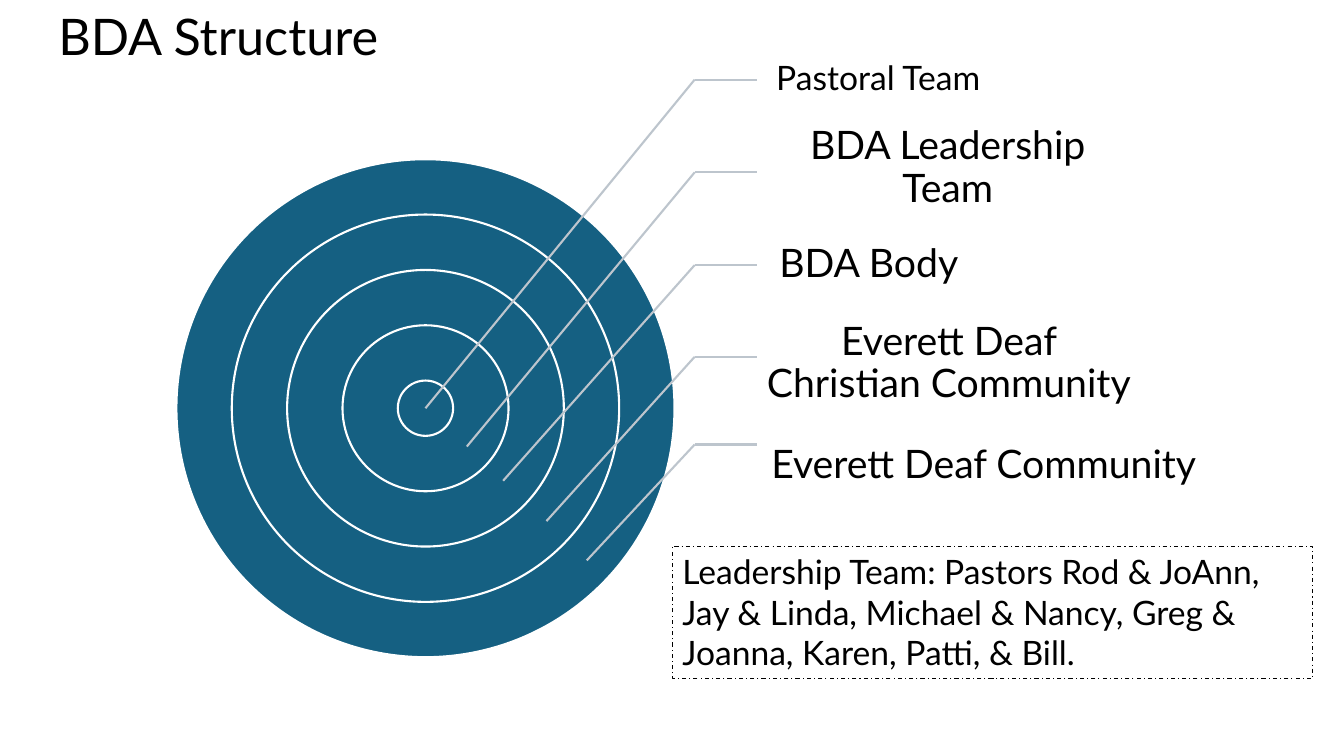
import pptx
import pptx.dml.color
import pptx.enum.dml
import pptx.enum.shapes
import pptx.enum.text
import pptx.oxml.ns
import pptx.util
import lxml.etree

Inches = pptx.util.Inches
Pt = pptx.util.Pt
LEFT = pptx.enum.text.PP_ALIGN.LEFT
CENTER = pptx.enum.text.PP_ALIGN.CENTER
TOP = pptx.enum.text.MSO_ANCHOR.TOP
MIDDLE = pptx.enum.text.MSO_ANCHOR.MIDDLE
SHAPE = pptx.enum.shapes.MSO_SHAPE

LABEL_HEIGHT = 0.86
LEADER_LENGTH = 0.62
LABELS = [
    # text, size, align, (left, top, width), leader y, tip
    ("Pastoral Team", 24, LEFT, (0.62, 0, 2.47), 0.43, (-2.67, 3.69)),
    ("BDA Leadership Team", 28, CENTER, (0.58, 0.88, 3.68), 1.35, (-2.26, 4.07)),
    ("BDA Body", 28, LEFT, (0.62, 1.84, 2.47), 2.27, (-1.9, 4.41)),
    ("Everett Deaf Christian Community", 28, CENTER, (0.44, 2.82, 3.98), 3.18, (-1.47, 4.81)),
    ("Everett Deaf Community", 28, LEFT, (0.54, 3.83, 4.79), 4.05, (-1.07, 5.2)),
]


def color(value):
    """Turn a hex string into a colour."""
    return pptx.dml.color.RGBColor.from_string(value)


def write(sp, text, size=24, align=LEFT, anchor=TOP, spacing=1.0, insets=(0.1, 0.05, 0.1, 0.05)):
    """Put one formatted paragraph into a shape."""
    tf = sp.text_frame
    tf.word_wrap = True
    tf.vertical_anchor = anchor
    tf.margin_left, tf.margin_top, tf.margin_right, tf.margin_bottom = map(Inches, insets)
    p = tf.paragraphs[0]
    p.alignment = align
    p.line_spacing = spacing
    r = p.add_run()
    r.text = text
    r.font.size = Pt(size)
    r.font.name = "Lato"
    r.font.color.rgb = color("000000")


def add_box(slide, x, y, w, h):
    """Add an empty text box."""
    return slide.shapes.add_textbox(Inches(x), Inches(y), Inches(w), Inches(h))


def add_line(slide, x1, y1, x2, y2):
    """Add a grey leader segment without a shadow."""
    line = slide.shapes.add_connector(
        pptx.enum.shapes.MSO_CONNECTOR.STRAIGHT, Inches(x1), Inches(y1), Inches(x2), Inches(y2))
    line.line.color.rgb = color("BDC5CD")
    line.line.width = Pt(1.5)
    lxml.etree.SubElement(line._element.spPr, pptx.oxml.ns.qn("a:effectLst"))
    return line


def add_shape(slide, kind, x, y, w, h, line, width, fill=None):
    """Add an outlined preset shape, filled if a colour is given."""
    sp = slide.shapes.add_shape(kind, Inches(x), Inches(y), Inches(w), Inches(h))
    sp.shadow.inherit = False
    if fill:
        sp.fill.solid()
        sp.fill.fore_color.rgb = color(fill)
    else:
        sp.fill.background()
    sp.line.color.rgb = color(line)
    sp.line.width = Pt(width)
    return sp


def add_title(slide, x, y, w, h):
    """Write the slide title."""
    write(add_box(slide, x, y, w, h), "BDA Structure", size=36)


def add_rings(slide, x, y, size, count=5):
    """Draw concentric circles, each ring as wide as the core's diameter."""
    core = size / (2 * count - 1)
    for i in range(count):
        d = size - 2 * i * core
        add_shape(slide, SHAPE.OVAL, x + i * core, y + i * core, d, d, "FFFFFF", 1.5, "156082")


def add_labels(slide, x, y):
    """Place the ring names and their bent leaders."""
    for text, size, align, (left, top, width), leader, (tip_x, tip_y) in LABELS:
        label = add_box(slide, x + left, y + top, width, LABEL_HEIGHT)
        edge = size / 700
        write(label, text, size=size, align=align, anchor=MIDDLE, spacing=0.9,
              insets=(size / 127, edge, edge, edge))
        flat = add_line(slide, x, y + leader, x + LEADER_LENGTH, y + leader)
        if left == LEADER_LENGTH:
            flat.end_connect(label, 1)
        add_line(slide, x, y + leader, x + tip_x, y + tip_y)


def add_team(slide, x, y, w, h):
    """Draw the dashed box that names the leadership team."""
    sp = add_shape(slide, SHAPE.RECTANGLE, x, y, w, h, "000000", 0.75)
    sp.line.dash_style = pptx.enum.dml.MSO_LINE.DASH_DOT
    write(sp, "Leadership Team: Pastors Rod & JoAnn, Jay & Linda, Michael & Nancy, "
              "Greg & Joanna, Karen, Patti, & Bill.")


def main():
    """Build and save the slide."""
    prs = pptx.Presentation()
    prs.slide_width, prs.slide_height = Inches(13.33), Inches(7.5)
    slide = prs.slides.add_slide(prs.slide_layouts[6])
    add_rings(slide, 1.75, 1.58, 4.94)
    add_labels(slide, 6.89, 0.36)
    add_team(slide, 6.67, 5.42, 6.35, 1.31)
    add_title(slide, 0.48, 0, 4.06, 0.71)
    prs.save("out.pptx")


if __name__ == "__main__":
    main()
